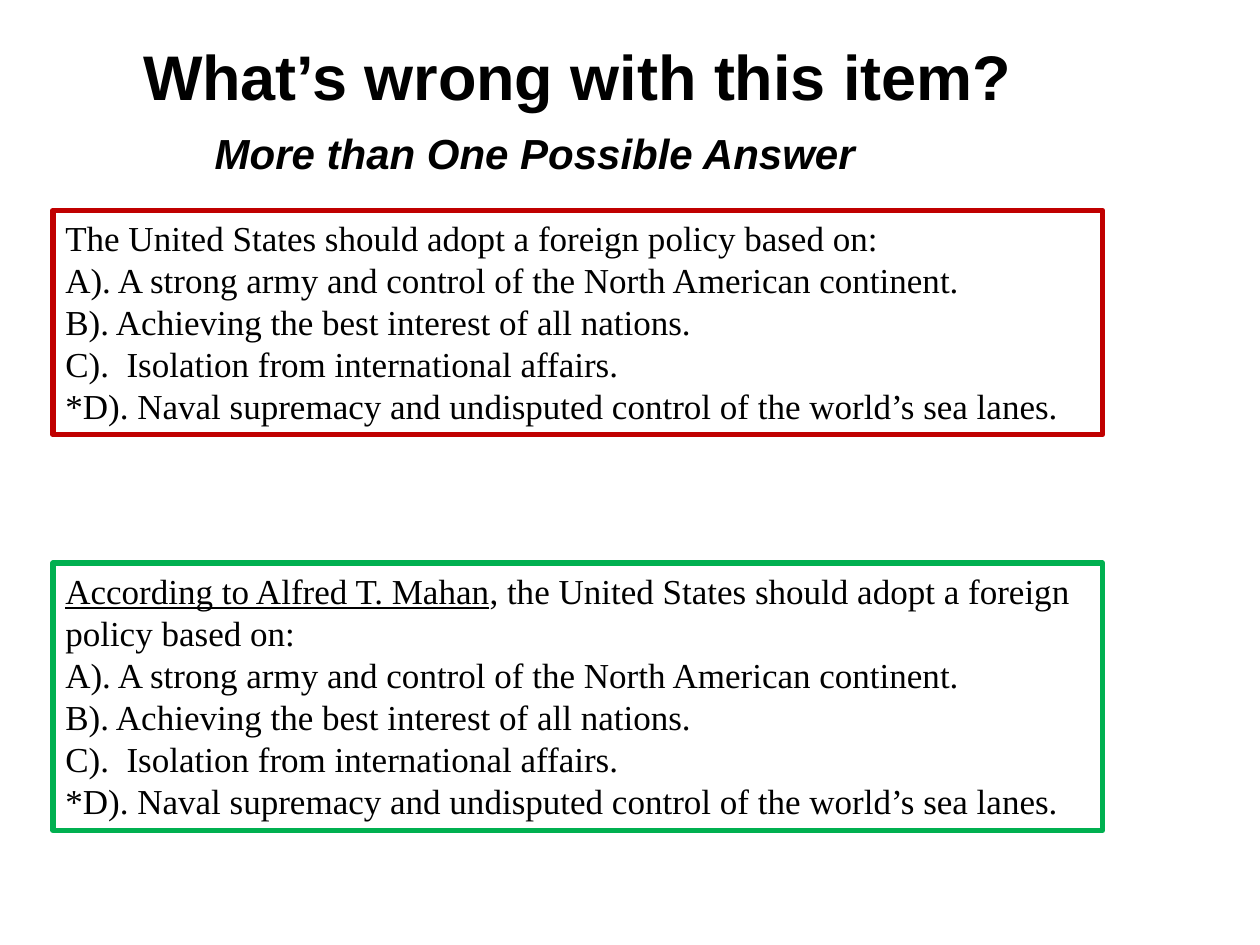
from pptx import Presentation
from pptx import util as u
from pptx.dml.color import RGBColor
from pptx.enum import shapes, text


def color(code):
    return RGBColor.from_string(code)


def write(para, words, font="Times New Roman", size=20, ink="000000",
          bold=False, slant=False, under=False):
    run = para.add_run()
    run.text = words
    face = run.font
    face.name, face.size = font, u.Pt(size)
    face.bold, face.italic, face.underline = bold, slant, under
    face.color.rgb = color(ink)


class Deck:
    """Holds the heading style and the current slide."""
    head = dict(font="Arial", bold=True)

    def __init__(self, show):
        self.slide = show.slides.add_slide(show.slide_layouts[5])

    def place(self, shape, left, top, width, height):
        shape.left, shape.top = u.Inches(left), u.Inches(top)
        shape.width, shape.height = u.Inches(width), u.Inches(height)

    def center(self, frame, words, **style):
        frame.auto_size = text.MSO_AUTO_SIZE.NONE
        frame.vertical_anchor = text.MSO_ANCHOR.TOP
        para = frame.paragraphs[0]
        para.alignment = text.PP_ALIGN.CENTER
        write(para, words, **self.head, **style)

    def title(self, words, *area):
        shape = self.slide.shapes.title
        self.place(shape, *area)
        self.center(shape.text_frame, words, size=36)
        shape.text_frame.word_wrap = False

    def subhead(self, words, *area):
        box = self.slide.shapes.add_textbox(*map(u.Inches, area))
        box.text_frame.word_wrap = True
        self.center(box.text_frame, words, size=24, slant=True)

    def item(self, stem, picks, edge, *area):
        """Framed question: stem is a list of (words, underlined) pairs."""
        box = self.slide.shapes.add_shape(
            shapes.MSO_SHAPE.RECTANGLE, *map(u.Inches, area))
        box.shadow.inherit = False
        box.fill.solid()
        box.fill.fore_color.rgb = color("FFFFFF")
        box.line.color.rgb = color(edge)
        box.line.width = u.Pt(3.15)
        frame = box.text_frame
        frame.word_wrap = True
        frame.vertical_anchor = text.MSO_ANCHOR.TOP
        lines = [stem] + [[(pick, False)] for pick in picks]
        for i, line in enumerate(lines):
            para = frame.add_paragraph() if i else frame.paragraphs[0]
            para.alignment = text.PP_ALIGN.LEFT
            for words, under in line:
                write(para, words, under=under)


def main():
    show = Presentation()
    show.slide_width, show.slide_height = u.Inches(10), u.Inches(7.5)
    deck = Deck(show)

    # Headings
    deck.title("What’s wrong with this item?", 1, 0.25, 7.17, 0.71)
    deck.subhead("More than One Possible Answer", 1.08, 0.96, 6.33, 0.5)

    # Flawed item, then the improved one
    picks = [
        "A). A strong army and control of the North American continent.",
        "B). Achieving the best interest of all nations.",
        "C).  Isolation from international affairs.",
        "*D). Naval supremacy and undisputed control of the world’s sea lanes.",
    ]
    ask = "the United States should adopt a foreign policy based on:"
    deck.item([("T" + ask[1:], False)], picks, "C00000",
              0.42, 1.67, 8.33, 1.78)
    deck.item([("According to Alfred T. Mahan", True), (", " + ask, False)],
              picks, "00B050", 0.42, 4.47, 8.33, 2.12)

    show.save("out.pptx")


if __name__ == "__main__":
    main()
